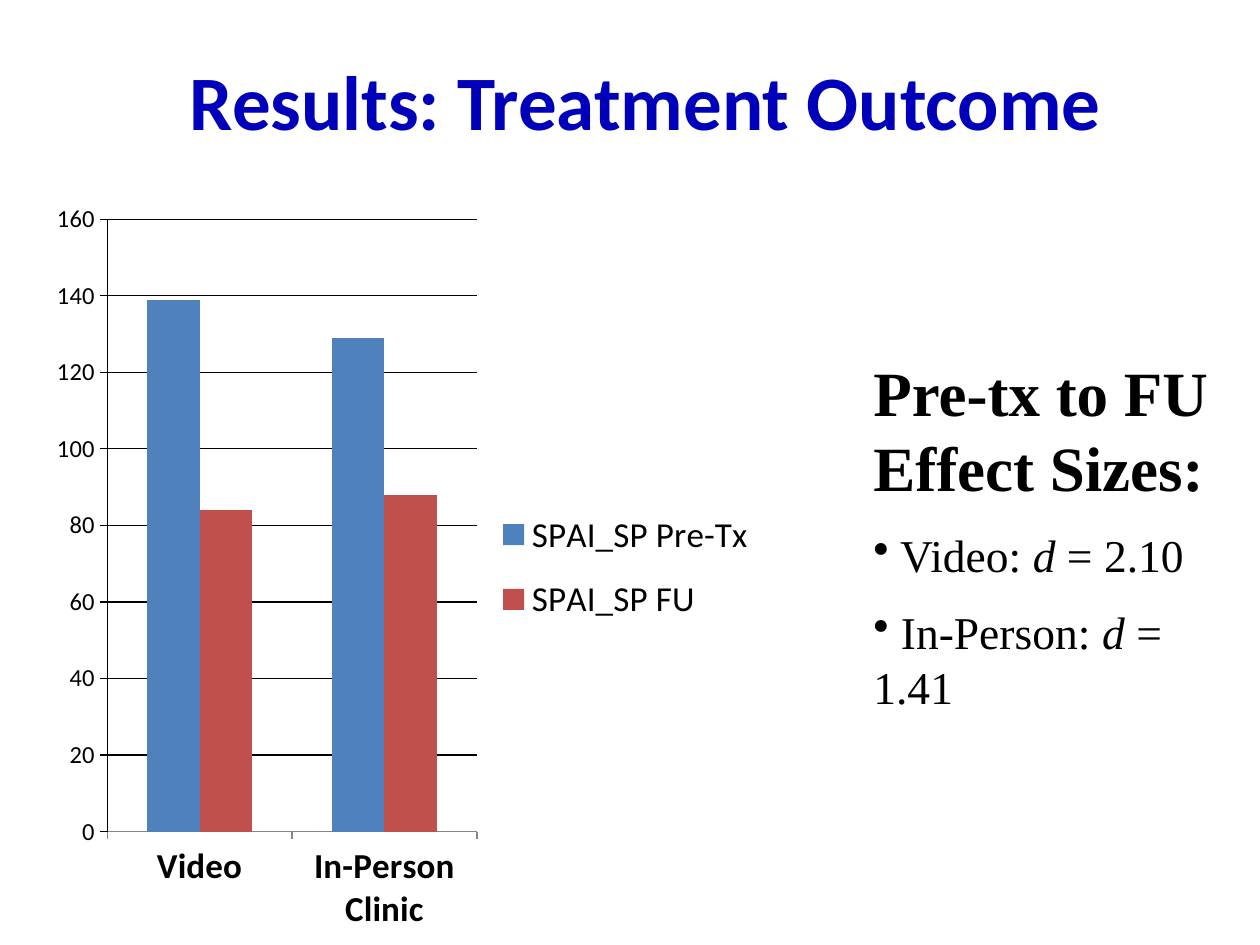
from dataclasses import dataclass
from lxml import etree
from pptx import Presentation
from pptx import util as u
from pptx.chart import data as chart_data
from pptx.dml import color
from pptx.enum import chart as charts, text
from pptx.oxml import ns

SCALE = 914400 // 126


@dataclass(frozen=True)
class Theme:
    sans: str = "Calibri"
    serif: str = "Times New Roman"
    title: str = "0000BA"
    ink: str = "000000"
    paper: str = "FFFFFF"
    axis: str = "868686"
    series: tuple = ("4F81BD", "C0504D")
    title_size: int = 44
    heading_size: int = 36
    body_size: int = 26
    label_size: int = 20
    tick_size: int = 14


THEME = Theme()


def px(value):
    return u.Emu(value * SCALE)


def rgb(value):
    return color.RGBColor.from_string(value)


def style(font, face, size, ink=THEME.ink, bold=False, italic=False):
    font.name, font.size = face, u.Pt(size)
    font.bold, font.italic = bold, italic
    font.color.rgb = rgb(ink)


def add_text(para, words, **look):
    span = para.add_run()
    span.text = words
    style(span.font, **look)


def set_layout(element, successors, mode, **fractions):
    for old in element.findall(ns.qn("c:layout")):
        element.remove(old)
    layout = etree.Element(ns.qn("c:layout"))
    manual = etree.SubElement(layout, ns.qn("c:manualLayout"))
    settings = {**mode, "xMode": "edge", "yMode": "edge", **fractions}
    for tag, value in settings.items():
        etree.SubElement(manual, ns.qn("c:" + tag)).set("val", str(value))
    element.insert_element_before(layout, *successors)


class SlideBuilder:
    def __init__(self, deck, theme):
        self.theme = theme
        self.slide = deck.slides.add_slide(deck.slide_layouts[5])

    def title(self, words, left, top, width, height):
        box = self.slide.shapes.title
        box.left, box.top, box.width, box.height = map(px, (left, top, width, height))
        frame = box.text_frame
        frame.vertical_anchor = text.MSO_ANCHOR.MIDDLE
        para = frame.paragraphs[0]
        para.alignment = text.PP_ALIGN.CENTER
        add_text(para, words, face=self.theme.sans, size=self.theme.title_size,
                 ink=self.theme.title, bold=True)

    def effect_sizes(self, heading, effects, *place):
        theme = self.theme
        frame = self.slide.shapes.add_textbox(*map(px, place)).text_frame
        frame.word_wrap = True
        frame.auto_size = text.MSO_AUTO_SIZE.SHAPE_TO_FIT_TEXT
        para = frame.paragraphs[0]
        para.space_before = u.Pt(theme.heading_size / 2)
        add_text(para, heading, face=theme.serif, size=theme.heading_size, bold=True)
        for group, value in effects:
            para = frame.add_paragraph()
            para.space_before = u.Pt(theme.body_size / 2)
            bullet = etree.SubElement(para._p.get_or_add_pPr(), ns.qn("a:buChar"))
            bullet.set("char", "•")
            for words, italic in ((f" {group}: ", False), ("d ", True), (f"= {value}", False)):
                add_text(para, words, face=theme.serif, size=theme.body_size, italic=italic)

    def column_chart(self, categories, series, *place):
        theme = self.theme
        data = chart_data.CategoryChartData()
        data.categories = categories
        for name, values in series.items():
            data.add_series(name, values)
        frame = self.slide.shapes.add_chart(
            charts.XL_CHART_TYPE.COLUMN_CLUSTERED, *map(px, place), data)
        chart = frame.chart
        chart.has_title = False
        style(chart.font, theme.sans, 10)
        plot = chart.plots[0]
        plot.gap_width, plot.overlap, plot.vary_by_categories = 150, 0, False
        for column, fill in zip(plot.series, theme.series):
            column.format.fill.solid()
            column.format.fill.fore_color.rgb = rgb(fill)
        self.axis(chart.category_axis, theme.label_size, theme.axis, bold=True)
        values = chart.value_axis
        self.axis(values, theme.tick_size, theme.ink)
        values.minimum_scale, values.maximum_scale, values.major_unit = 0, 160, 20
        values.has_major_gridlines = True
        self.line(values.major_gridlines.format.line, theme.ink)
        self.legend(chart)
        area = chart._chartSpace.chart.plotArea
        set_layout(area, ("c:barChart",), {"layoutTarget": "inner"},
                   x=0.09, y=0.04, w=0.51, h=0.81)

    def axis(self, axis, size, ink, bold=False):
        axis.major_tick_mark = charts.XL_TICK_MARK.OUTSIDE
        style(axis.tick_labels.font, self.theme.sans, size, bold=bold)
        self.line(axis.format.line, ink)

    def line(self, line, ink):
        line.color.rgb = rgb(ink)
        line.width = u.Pt(0.75)

    def legend(self, chart):
        chart.has_legend = True
        legend = chart.legend
        legend.position = charts.XL_LEGEND_POSITION.RIGHT
        legend.include_in_layout = False
        style(legend.font, self.theme.sans, self.theme.label_size)
        set_layout(legend._element, ("c:overlay", "c:spPr", "c:txPr"), {},
                   x=0.62, y=0.4, w=0.37, h=0.2)


def main():
    deck = Presentation()
    deck.slide_width, deck.slide_height = px(1260), px(945)
    builder = SlideBuilder(deck, THEME)
    builder.title("Results: Treatment Outcome", 84, 32, 1124, 136)
    builder.effect_sizes("Pre-tx to FU Effect Sizes:",
                         (("Video", "2.10"), ("In-Person", "1.41")),
                         861, 347, 399, 330)
    builder.column_chart(("Video", "In-Person Clinic"),
                         {"SPAI_SP Pre-Tx": (139, 129), "SPAI_SP FU": (84, 88)},
                         42, 189, 725, 756)
    deck.save("out.pptx")


if __name__ == "__main__":
    main()
